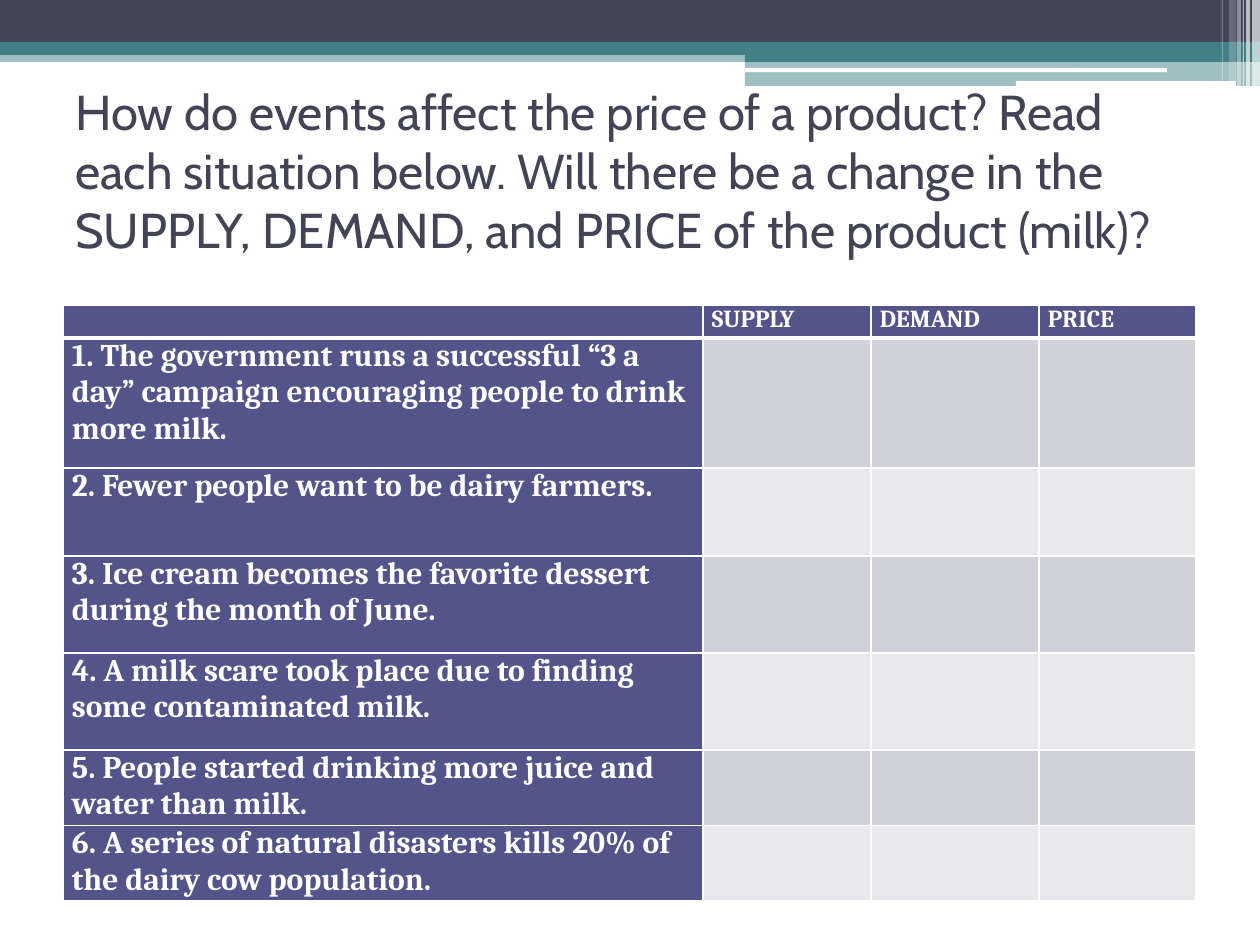
from dataclasses import dataclass

from lxml.etree import SubElement
from pptx import Presentation
from pptx.dml.color import RGBColor
from pptx.enum.shapes import MSO_SHAPE as Preset
from pptx.enum.text import MSO_ANCHOR as Anchor
from pptx.oxml.ns import qn
from pptx.slide import Slide
from pptx.table import _Cell as Cell
from pptx.text.text import _Paragraph as Paragraph
from pptx.util import Emu, Pt

PX = 914400 / 126
SLATE = RGBColor(0x42, 0x44, 0x56)
TEAL = RGBColor(0x43, 0x80, 0x86)
WHITE = RGBColor(0xFF, 0xFF, 0xFF)
INDIGO = RGBColor(0x53, 0x54, 0x8A)
BAND_DARK = RGBColor(0xD1, 0xD1, 0xDA)
BAND_LIGHT = RGBColor(0xE9, 0xE9, 0xED)


@dataclass(frozen=True)
class Bar:
    left: int
    top: int
    width: int
    height: int
    color: RGBColor
    opacity: int = 100
    preset: Preset = Preset.RECTANGLE


@dataclass(frozen=True)
class Row:
    height: int
    texts: tuple[str, ...]


BARS = [
    Bar(0, 50, 1260, 12, TEAL, 50),
    Bar(0, 0, 1260, 42, SLATE),
    Bar(0, 42, 1260, 13, TEAL),
    Bar(745, 49, 515, 13, TEAL),
    Bar(745, 61, 515, 25, TEAL, 50),
    Bar(745, 68, 422, 4, WHITE, preset=Preset.ROUNDED_RECTANGLE),
    Bar(1016, 81, 220, 5, WHITE, preset=Preset.ROUNDED_RECTANGLE),
    Bar(1252, 0, 8, 86, WHITE, 65),
    Bar(1246, 0, 4, 86, WHITE, 65),
    Bar(1243, 0, 1, 86, WHITE, 60),
    Bar(1237, 0, 4, 86, WHITE, 40),
    Bar(1229, 0, 7, 81, WHITE, 20),
    Bar(1222, 0, 1, 81, WHITE, 30),
]

TITLE = (
    "How do events affect the price of a product? Read each situation below. "
    "Will there be a change in the SUPPLY, DEMAND, and PRICE of the product (milk)?"
)
COLUMN_WIDTHS = [640, 168, 168, 157]
ROWS = [
    Row(33, ("", "SUPPLY", "DEMAND", "PRICE")),
    Row(130, ("1. The government runs a successful “3 a day” campaign "
              "encouraging people to drink more milk.",)),
    Row(88, ("2. Fewer people want to be dairy farmers.",)),
    Row(97, ("3. Ice cream becomes the favorite dessert during the month of June.",)),
    Row(97, ("4. A milk scare took place due to finding some contaminated milk.",)),
    Row(66, ("5. People started drinking more juice and water than milk.",)),
    Row(66, ("6. A series of natural disasters kills 20% of the dairy cow population.",)),
]


def px(value: int) -> Emu:
    return Emu(round(value * PX))


def draw_bar(slide: Slide, bar: Bar) -> None:
    shape = slide.shapes.add_shape(
        bar.preset, px(bar.left), px(bar.top), px(bar.width), px(bar.height)
    )
    shape.shadow.inherit = False
    shape.line.fill.background()
    shape.fill.solid()
    shape.fill.fore_color.rgb = bar.color
    if bar.opacity < 100:
        color = shape.fill._xPr.find(f".//{qn('a:srgbClr')}")
        SubElement(color, qn("a:alpha"), val=str(bar.opacity * 1000))


def format_runs(
    paragraph: Paragraph, font: str, size: int, color: RGBColor, bold: bool = False
) -> None:
    for run in paragraph.runs:
        run.font.name = font
        run.font.size = Pt(size)
        run.font.bold = bold
        run.font.color.rgb = color


def draw_title(slide: Slide) -> None:
    box = slide.shapes.add_textbox(px(63), px(126), px(1134), px(147))
    frame = box.text_frame
    frame.word_wrap = True
    frame.vertical_anchor = Anchor.MIDDLE
    frame.margin_bottom = px(65)
    frame.text = TITLE
    format_runs(frame.paragraphs[0], "Cabin", 28, SLATE)


def set_border(cell: Cell, side: str, points: int) -> None:
    properties = cell._tc.get_or_add_tcPr()
    line = SubElement(properties, qn(f"a:ln{side}"), w=str(Pt(points)))
    fill = SubElement(line, qn("a:solidFill"))
    SubElement(fill, qn("a:srgbClr"), val=str(WHITE))


def format_cell(cell: Cell, text: str, row: int, column: int) -> None:
    cell.margin_left = cell.margin_right = px(9)
    cell.margin_top = cell.margin_bottom = 0
    for side in "LRTB":
        under_header = (row, side) in ((0, "B"), (1, "T"))
        set_border(cell, side, 3 if under_header else 1)
    cell.fill.solid()
    if row == 0 or column == 0:
        cell.fill.fore_color.rgb = INDIGO
    else:
        cell.fill.fore_color.rgb = BAND_DARK if row % 2 else BAND_LIGHT
    size = 14 if row == 0 else 18
    paragraph = cell.text_frame.paragraphs[0]
    if text:
        paragraph.text = text
        format_runs(paragraph, "Cambria", size, WHITE, bold=True)
    else:
        SubElement(paragraph._p, qn("a:endParaRPr"), sz=str(size * 100))


def draw_table(slide: Slide) -> None:
    frame = slide.shapes.add_table(
        len(ROWS), len(COLUMN_WIDTHS), px(63), px(305),
        px(sum(COLUMN_WIDTHS)), px(sum(row.height for row in ROWS)),
    )
    table = frame.table
    for column, width in zip(table.columns, COLUMN_WIDTHS):
        column.width = px(width)
    for row_index, row in enumerate(ROWS):
        table.rows[row_index].height = px(row.height)
        for column_index in range(len(COLUMN_WIDTHS)):
            text = row.texts[column_index] if column_index < len(row.texts) else ""
            format_cell(table.cell(row_index, column_index), text, row_index, column_index)


def main() -> None:
    presentation = Presentation()
    presentation.slide_width = px(1260)
    presentation.slide_height = px(945)
    slide = presentation.slides.add_slide(presentation.slide_layouts[6])
    for bar in BARS:
        draw_bar(slide, bar)
    draw_title(slide)
    draw_table(slide)
    presentation.save("out.pptx")


if __name__ == "__main__":
    main()
